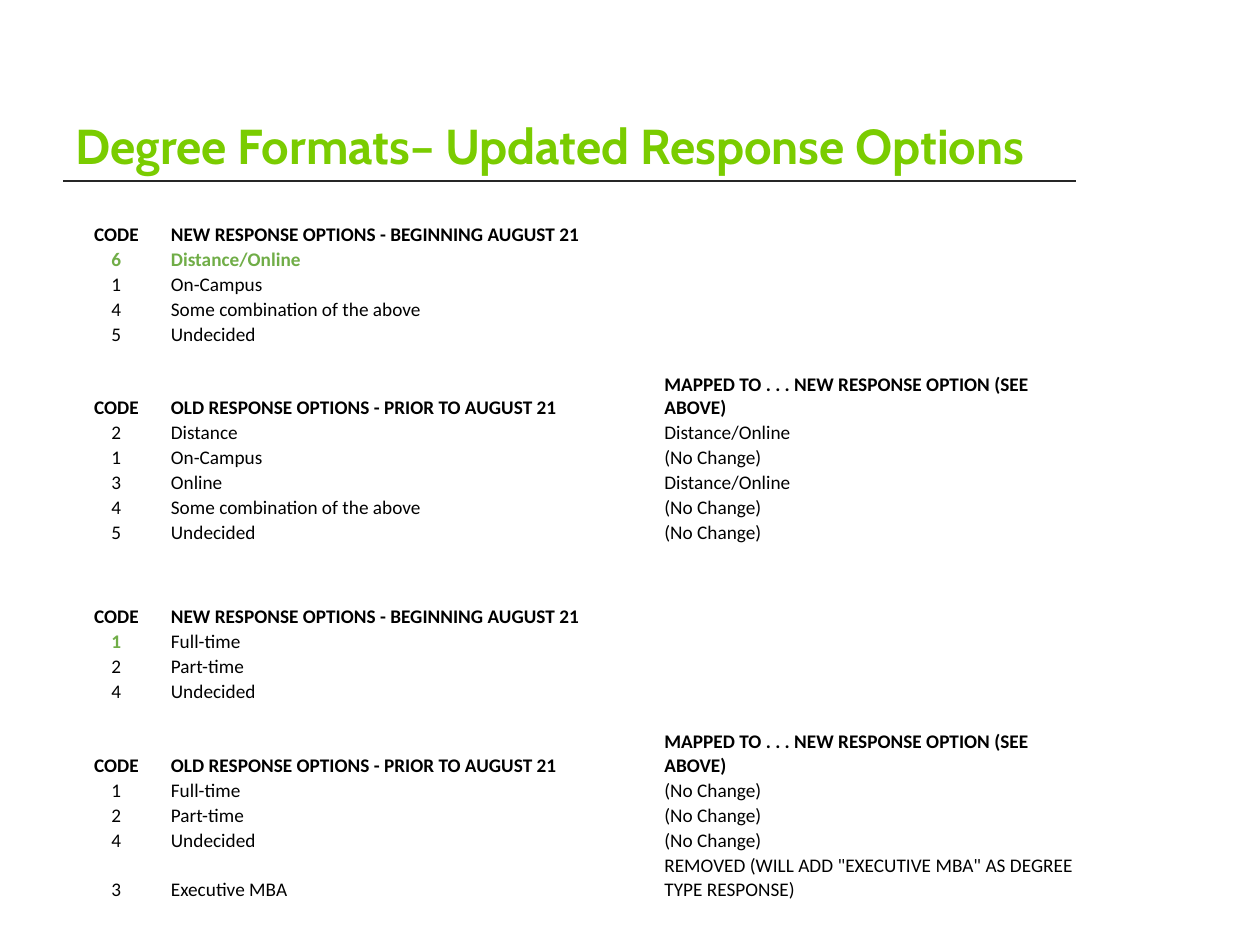
from dataclasses import dataclass

from lxml import etree
from pptx import Presentation
from pptx.dml.color import RGBColor
from pptx.enum import shapes, text
from pptx.oxml.ns import qn
from pptx.util import Pt


@dataclass(frozen=True)
class Theme:
    lime: RGBColor = RGBColor(0x7A, 0xCC, 0x00)
    green: RGBColor = RGBColor(0x70, 0xAD, 0x47)
    black: RGBColor = RGBColor(0, 0, 0)
    rule: RGBColor = RGBColor(0x26, 0x26, 0x26)
    head: str = "Cabin"
    body: str = "Calibri"
    big: float = 28
    small: float = 11


LEFT, WIDTH = 36, 579
COLS = (61, 282, 236)
ROW = 11.5

NEW = ("CODE", "NEW RESPONSE OPTIONS - BEGINNING AUGUST 21", "")
OLD = ("CODE", "OLD RESPONSE OPTIONS - PRIOR TO AUGUST 21",
       "MAPPED TO . . . NEW RESPONSE OPTION (SEE ABOVE)")
GAP = ("", "", "")
SAME = "(No Change)"
ONLINE = "Distance/Online"
MIX = "Some combination of the above"

FORMATS = [
    NEW,
    ("6", ONLINE, ""),
    ("1", "On-Campus", ""),
    ("4", MIX, ""),
    ("5", "Undecided", ""),
    GAP,
    OLD,
    ("2", "Distance", ONLINE),
    ("1", "On-Campus", SAME),
    ("3", "Online", ONLINE),
    ("4", MIX, SAME),
    ("5", "Undecided", SAME),
]
LOADS = [
    NEW,
    ("1", "Full-time", ""),
    ("2", "Part-time", ""),
    ("4", "Undecided", ""),
    GAP,
    OLD,
    ("1", "Full-time", SAME),
    ("2", "Part-time", SAME),
    ("4", "Undecided", SAME),
    ("3", "Executive MBA",
     'REMOVED (WILL ADD "EXECUTIVE MBA" AS DEGREE TYPE RESPONSE)'),
]


class Deck:
    """Holds the theme and the slide being filled."""

    def __init__(self, theme):
        self.theme = theme
        self.file = Presentation()
        self.file.slide_width, self.file.slide_height = Pt(720), Pt(540)
        self.slide = self.file.slides.add_slide(self.file.slide_layouts[5])

    def font(self, para, name, size, color, bold):
        font = para.font
        font.name, font.size, font.bold = name, Pt(size), bold
        font.color.rgb = color

    def title(self, words, top, height):
        box = self.slide.shapes.title
        box.left, box.top = Pt(LEFT), Pt(top)
        box.width, box.height = Pt(WIDTH), Pt(height)
        frame = box.text_frame
        frame.text = words
        frame.word_wrap = True
        frame.auto_size = text.MSO_AUTO_SIZE.NONE
        frame.vertical_anchor = text.MSO_ANCHOR.BOTTOM
        para = frame.paragraphs[0]
        para.alignment = text.PP_ALIGN.LEFT
        para.line_spacing = Pt(36)
        self.font(para, self.theme.head, self.theme.big, self.theme.lime, True)

    def rule(self, top):
        line = self.slide.shapes.add_connector(
            shapes.MSO_CONNECTOR.STRAIGHT,
            Pt(LEFT), Pt(top), Pt(LEFT + WIDTH), Pt(top))
        line.line.color.rgb = self.theme.rule
        line.line.width = Pt(1.5)
        etree.SubElement(line.element.spPr, qn("a:effectLst"))

    def cell(self, cell, words, color, bold, center):
        cell.fill.background()
        cell.vertical_anchor = text.MSO_ANCHOR.BOTTOM
        cell.margin_left = cell.margin_right = cell.margin_top = Pt(0.7)
        cell.margin_bottom = 0
        cell.text = words
        para = cell.text_frame.paragraphs[0]
        para.alignment = text.PP_ALIGN.CENTER if center else text.PP_ALIGN.LEFT
        self.font(para, self.theme.body, self.theme.small, color, bold)
        if not words:  # an empty cell takes its height from the end mark
            size = str(int(self.theme.small * 100))
            etree.SubElement(para._p, qn("a:endParaRPr"), sz=size)

    def table(self, rows, top, height, marks, tall=()):
        """marks: green bold cells as (row, column); tall: two-line rows."""
        frame = self.slide.shapes.add_table(
            len(rows), len(COLS), Pt(LEFT), Pt(top), Pt(WIDTH), Pt(height))
        grid = frame.table
        grid.first_row = grid.horz_banding = False
        for col, width in zip(grid.columns, COLS):
            col.width = Pt(width)
        for r, row in enumerate(rows):
            grid.rows[r].height = Pt(ROW * (2 if r in tall else 1))
            for c, words in enumerate(row):
                mark = (r, c) in marks
                color = self.theme.green if mark else self.theme.black
                bold = mark or row in (NEW, OLD)
                self.cell(grid.cell(r, c), words, color, bold, c == 0)
        frame.height = Pt(height)


def main():
    deck = Deck(Theme())
    deck.rule(103.5)
    deck.title("Degree Formats– Updated Response Options", 25, 78.5)
    deck.table(FORMATS, 126.5, 178.5, {(1, 0), (1, 1)})
    deck.table(LOADS, 345, 164, {(1, 0)}, tall=(9,))
    deck.file.save("out.pptx")


if __name__ == "__main__":
    main()
